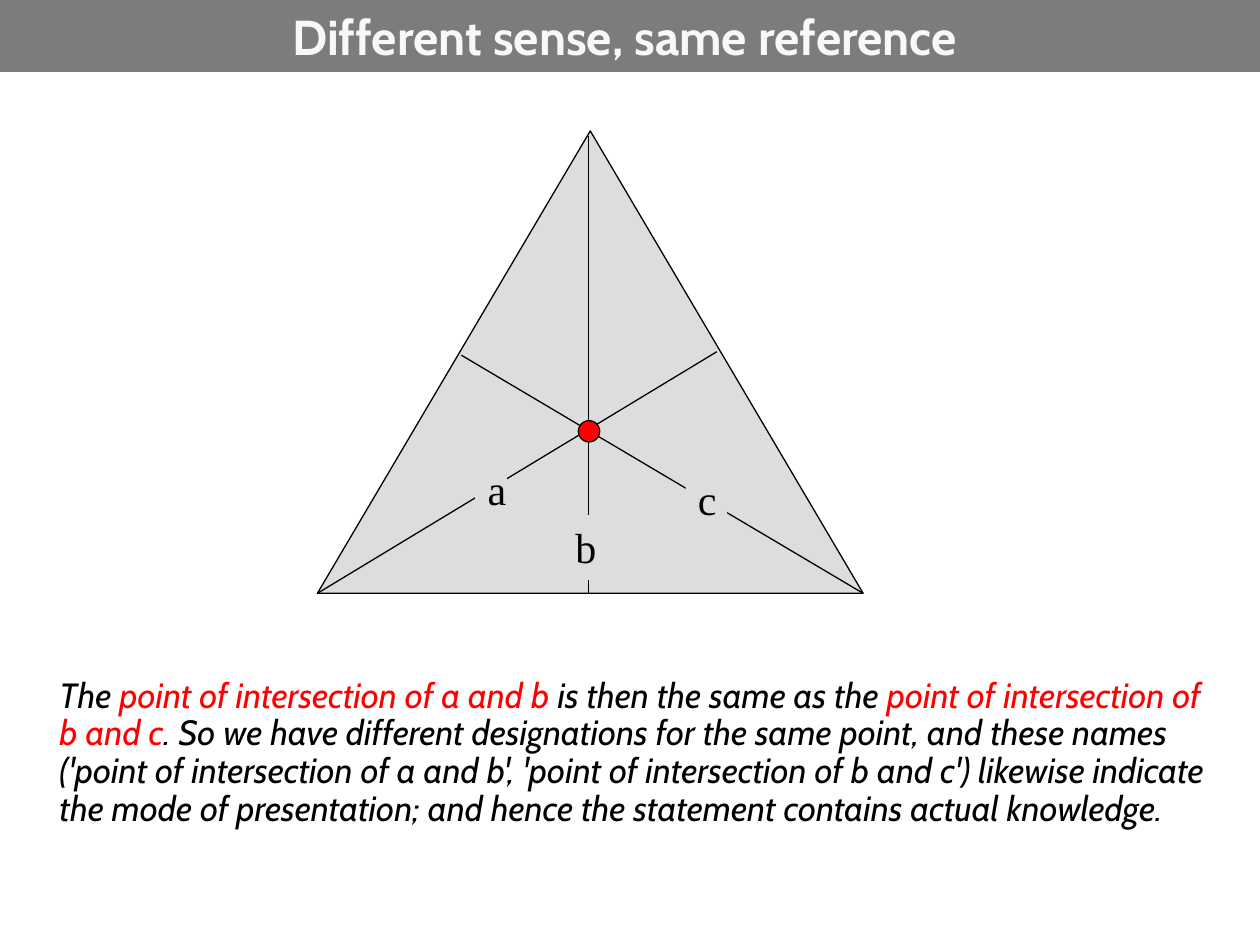
from dataclasses import dataclass
from typing import Optional

from lxml.etree import SubElement
from pptx import Presentation
from pptx.dml.color import RGBColor
from pptx.enum.shapes import MSO_CONNECTOR as CONN, MSO_SHAPE as SHAPE
from pptx.enum.text import MSO_ANCHOR as ANCHOR, PP_ALIGN as ALIGN
from pptx.oxml.ns import qn
from pptx.util import Cm, Pt

BLACK = RGBColor(0x00, 0x00, 0x00)
RED = RGBColor(0xFF, 0x00, 0x00)
BAR = RGBColor(0x7C, 0x7C, 0x7C)
PALE = RGBColor(0xF8, 0xF8, 0xF8)
GREY = RGBColor(0xDD, 0xDD, 0xDD)

TITLE_FONT = {"name": "Cabin", "size": Pt(28), "bold": True}
BODY_FONT = {"name": "Cabin", "size": Pt(20), "italic": True}
LABEL_FONT = {"name": "Times New Roman", "size": Pt(24)}

LEFT, RIGHT, BASE, MIDDLE = 6.4, 17.4, 11.96, 11.86


@dataclass
class Box:
    x: float
    y: float
    w: float
    h: float
    fill: RGBColor
    line: Optional[RGBColor] = None
    kind: SHAPE = SHAPE.RECTANGLE


@dataclass
class Segment:
    x1: float
    y1: float
    x2: float
    y2: float


@dataclass
class Label:
    text: str
    box: Box
    wrap: bool = True


TITLE_BAR = Box(0, 0, 25.4, 1.45, BAR)
TRIANGLE = Box(LEFT, 2.64, RIGHT - LEFT, 9.32, GREY, BLACK, SHAPE.ISOSCELES_TRIANGLE)
POINT = Box(11.66, 8.48, 0.43, 0.43, RED, BLACK, SHAPE.OVAL)
MEDIANS = [
    Segment(MIDDLE, 2.74, MIDDLE, BASE),
    Segment(LEFT, BASE, 14.45, 7.09),
    Segment(RIGHT, BASE, 9.3, 7.16),
]
LABELS = [
    Label("a", Box(9.58, 9.22, 0.64, 1.27, GREY)),
    Label("c", Box(13.82, 9.42, 0.84, 1.27, GREY)),
    Label("b", Box(11.35, 10.39, 0.97, 1.3, GREY, GREY), wrap=False),
]
BODY = [
    ("The ", BLACK),
    ("point of intersection of a and b ", RED),
    ("is then the same as the", BLACK),
    (" point of intersection of b and c", RED),
    (". So we have different designations for the same point, and these names "
     "('point of intersection of a and b', 'point of intersection of b and c') "
     "likewise indicate the mode of presentation; and hence the statement "
     "contains actual knowledge.", BLACK),
]


def add_box(slide, box: Box):
    sp = slide.shapes.add_shape(box.kind, Cm(box.x), Cm(box.y), Cm(box.w), Cm(box.h))
    sp.shadow.inherit = False
    sp.fill.solid()
    sp.fill.fore_color.rgb = box.fill
    if box.line is None:
        sp.line.fill.background()
    else:
        sp.line.color.rgb = box.line
        sp.line.width = Pt(0.75)
    return sp


def add_segment(slide, seg: Segment) -> None:
    ln = slide.shapes.add_connector(
        CONN.STRAIGHT, Cm(seg.x1), Cm(seg.y1), Cm(seg.x2), Cm(seg.y2))
    ln.line.color.rgb = BLACK
    ln.line.width = Pt(0.75)
    SubElement(ln._element.spPr, qn("a:effectLst"))


def add_run(p, text: str, color: RGBColor, font: dict) -> None:
    r = p.add_run()
    r.text = text
    r.font.color.rgb = color
    for key, value in font.items():
        setattr(r.font, key, value)


def add_label(slide, label: Label) -> None:
    tf = add_box(slide, label.box).text_frame
    tf.word_wrap = label.wrap
    tf.vertical_anchor = ANCHOR.TOP
    p = tf.paragraphs[0]
    p.alignment = ALIGN.LEFT
    add_run(p, label.text, BLACK, LABEL_FONT)


def add_title(slide, text: str) -> None:
    tf = add_box(slide, TITLE_BAR).text_frame
    tf.vertical_anchor = ANCHOR.TOP
    p = tf.paragraphs[0]
    p.alignment = ALIGN.CENTER
    add_run(p, text, PALE, TITLE_FONT)


def add_body(slide) -> None:
    tf = slide.shapes.add_textbox(Cm(0), Cm(13.54), Cm(24.97), Cm(4.45)).text_frame
    tf.word_wrap = True
    p = tf.paragraphs[0]
    p.line_spacing = 0.9
    p.space_before = Pt(4)
    p._p.get_or_add_pPr().set("marL", str(Cm(0.95)))
    for text, color in BODY:
        add_run(p, text, color, BODY_FONT)


def main() -> None:
    prs = Presentation()
    prs.slide_width, prs.slide_height = Cm(25.4), Cm(19.05)
    slide = prs.slides.add_slide(prs.slide_layouts[6])
    add_title(slide, "Different sense, same reference ")
    add_body(slide)
    add_box(slide, TRIANGLE)
    for seg in MEDIANS:
        add_segment(slide, seg)
    add_box(slide, POINT)
    for label in LABELS:
        add_label(slide, label)
    prs.save("out.pptx")


if __name__ == "__main__":
    main()
